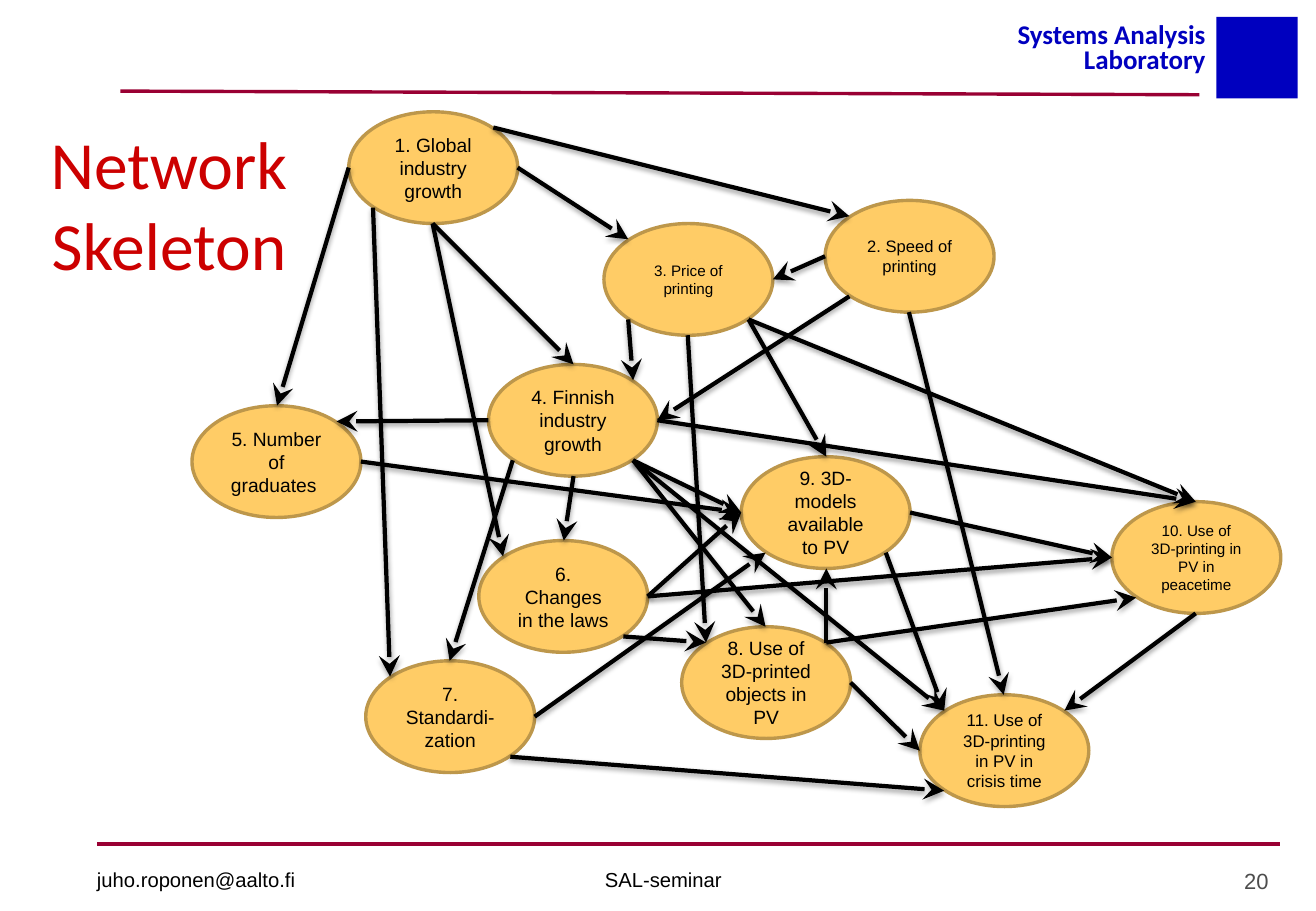
"""Build the network skeleton slide: eleven linked factors in a seminar frame."""
from lxml.etree import SubElement
from pptx import Presentation
from pptx.dml.color import RGBColor
from pptx.enum.shapes import MSO_CONNECTOR, MSO_SHAPE
from pptx.enum.text import MSO_ANCHOR, PP_ALIGN
from pptx.oxml import parse_xml
from pptx.oxml.ns import nsdecls, qn
from pptx.util import Pt

PX = 9144
WIDE, HIGH = 139, 92
DIAG = 0.354


def hue(code):
    return RGBColor.from_string(code)


def write(shape, text, size, color, font="Arial", align=PP_ALIGN.LEFT, bold=False):
    frame = shape.text_frame
    frame.word_wrap = True
    para = frame.paragraphs[0]
    para.text = text
    para.alignment = align
    for run in para.runs:
        run.font.size = Pt(size)
        run.font.name = font
        run.font.bold = bold
        run.font.color.rgb = hue(color)
    return para


deck = Presentation()
deck.slide_width, deck.slide_height = 1083 * PX, 750 * PX
slide = deck.slides.add_slide(deck.slide_layouts[6])
shapes = slide.shapes

for left, top, right, base in [(99, 75, 987, 78), (80, 695, 1053, 695)]:
    rule = shapes.add_connector(
        MSO_CONNECTOR.STRAIGHT, left * PX, top * PX, right * PX, base * PX)
    rule.line.color.rgb = hue("990033")
    rule.line.width = Pt(2)
    SubElement(rule._element.spPr, qn("a:effectLst"))

page = shapes.add_textbox(1014 * PX, 709 * PX, 42 * PX, 31 * PX)
write(page, "20", 13, "4D4D4D")

foot = shapes.add_textbox(70 * PX, 709 * PX, 666 * PX, 30 * PX)
para = write(foot, "juho.roponen@aalto.fi\tSAL-seminar", 12, "000000")
tabs = SubElement(para._p.get_or_add_pPr(), qn("a:tabLst"))
SubElement(tabs, qn("a:tab"), pos=str(418 * PX), algn="l")

block = shapes.add_shape(MSO_SHAPE.RECTANGLE, 1001 * PX, 14 * PX, 67 * PX, 67 * PX)
block.shadow.inherit = False
block.fill.solid()
block.fill.fore_color.rgb = hue("0000BF")
block.line.fill.background()

lab = shapes.add_textbox(796 * PX, 15 * PX, 206 * PX, 54 * PX)
para = write(lab, "Systems Analysis Laboratory", 16, "0000BF", "Calibri",
             PP_ALIGN.RIGHT, True)
para.line_spacing = Pt(15)

nodes = {
    1: (287, 92, 11.4, "1. Global industry growth"),
    2: (679, 165, 9.8, "2. Speed of printing"),
    3: (497, 184, 9, "3. Price of printing"),
    4: (402, 300, 11.4, "4. Finnish industry growth"),
    5: (158, 334, 11.4, "5. Number of graduates "),
    6: (394, 445, 11.4, "6. Changes in the laws"),
    7: (301, 544, 11.4, "7. Standardi-zation"),
    8: (561, 516, 11.4, "8. Use of 3D-printed objects in PV"),
    9: (610, 376, 11.4, "9. 3D-models available to PV"),
    10: (915, 413, 9, "10. Use of 3D-printing in PV in peacetime"),
    11: (757, 572, 10, "11. Use of 3D-printing in PV in crisis time"),
}
for left, top, size, text in nodes.values():
    oval = shapes.add_shape(
        MSO_SHAPE.OVAL, left * PX, top * PX, WIDE * PX, HIGH * PX)
    oval.shadow.inherit = False
    oval.fill.solid()
    oval.fill.fore_color.rgb = hue("FFCC66")
    oval.line.color.rgb = hue("BD974B")
    oval.line.width = Pt(2)
    oval.text_frame.vertical_anchor = MSO_ANCHOR.MIDDLE
    write(oval, text, size, "000000", align=PP_ALIGN.CENTER)

sites = {
    "n": (0, -0.5), "e": (0.5, 0), "s": (0, 0.5), "w": (-0.5, 0),
    "ne": (DIAG, -DIAG), "se": (DIAG, DIAG),
    "sw": (-DIAG, DIAG), "nw": (-DIAG, -DIAG),
}
links = [
    (1, "e", 3, "nw"), (1, "ne", 2, "nw"), (1, "s", 4, "n"), (1, "w", 5, "n"),
    (4, "w", 5, "ne"), (2, "sw", 4, "e"), (3, "sw", 4, "ne"), (8, "ne", 9, "s"),
    (8, "ne", 10, "sw"), (9, "e", 10, "w"), (9, "se", 11, "nw"),
    (10, "s", 11, "ne"), (8, "e", 11, "w"), (7, "se", 11, "sw"),
    (7, "e", 9, "sw"), (1, "sw", 7, "nw"), (4, "sw", 7, "n"), (1, "s", 6, "nw"),
    (4, "s", 6, "n"), (6, "e", 9, "w"), (6, "e", 10, "w"), (6, "se", 8, "nw"),
    (2, "w", 3, "e"), (2, "s", 11, "n"), (3, "s", 8, "nw"), (3, "se", 10, "n"),
    (3, "se", 9, "n"), (5, "e", 9, "w"), (4, "se", 8, "n"), (4, "se", 9, "w"),
    (4, "se", 11, "nw"), (4, "e", 10, "n"),
]
shade = (
    f'<a:effectLst {nsdecls("a")}><a:outerShdw blurRad="40000" dist="20000" '
    'dir="5400000" rotWithShape="0"><a:srgbClr val="000000">'
    '<a:alpha val="38000"/></a:srgbClr></a:outerShdw></a:effectLst>')
for start, out, end, into in links:
    ends = []
    for node, site in [(start, out), (end, into)]:
        left, top = nodes[node][:2]
        across, down = sites[site]
        ends.append(round(left + WIDE * (0.5 + across)) * PX)
        ends.append(round(top + HIGH * (0.5 + down)) * PX)
    arrow = shapes.add_connector(MSO_CONNECTOR.STRAIGHT, *ends)
    arrow.line.color.rgb = hue("000000")
    arrow.line.width = Pt(2.5)
    SubElement(arrow.line._get_or_add_ln(), qn("a:tailEnd"),
               type="stealth", w="lg", len="lg")
    arrow._element.spPr.append(parse_xml(shade))

title = shapes.add_textbox(0, 142 * PX, 278 * PX, 97 * PX)
title.text_frame.vertical_anchor = MSO_ANCHOR.BOTTOM
write(title, "Network Skeleton", 40, "CC0000", "Calibri", PP_ALIGN.CENTER)

deck.save("out.pptx")
